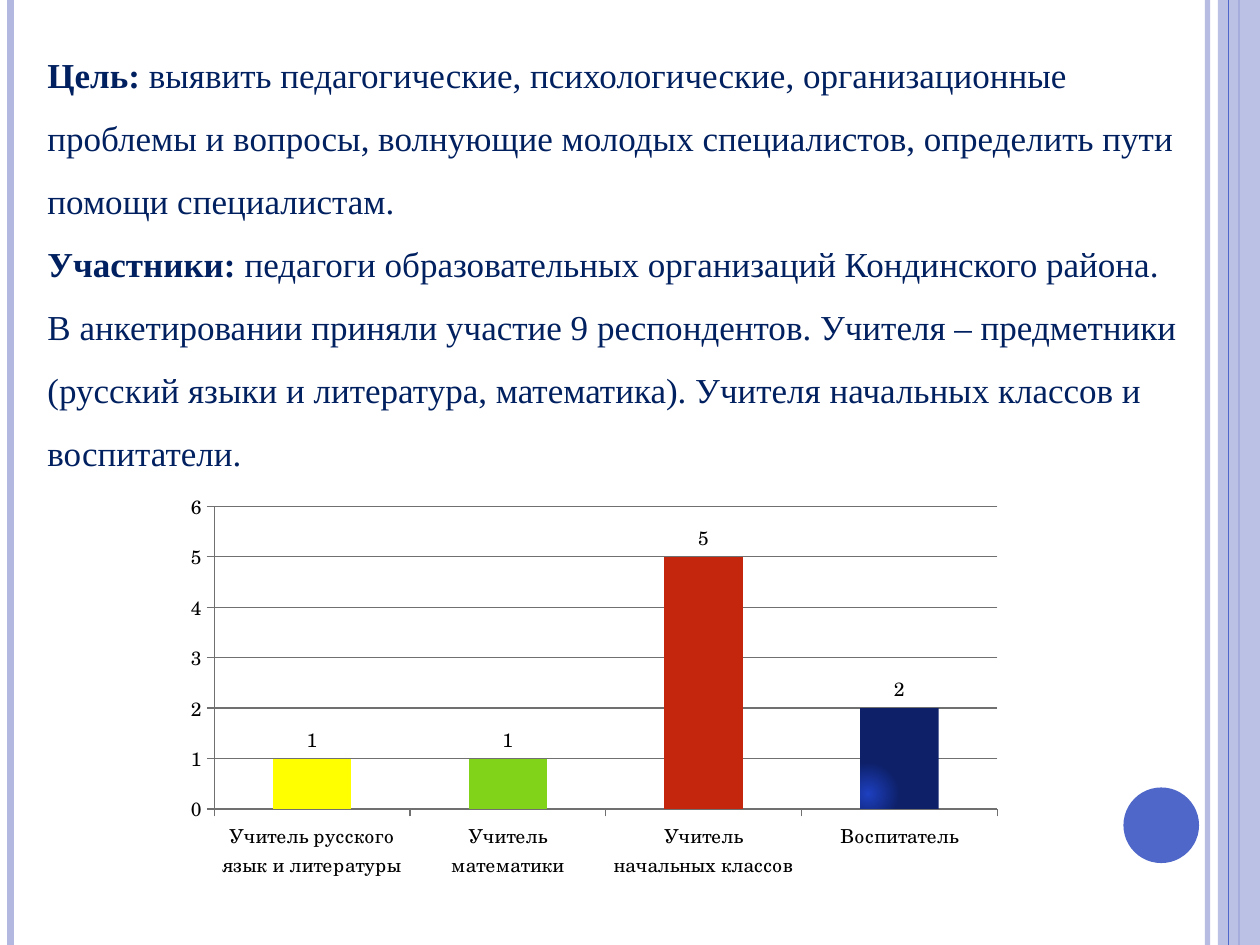
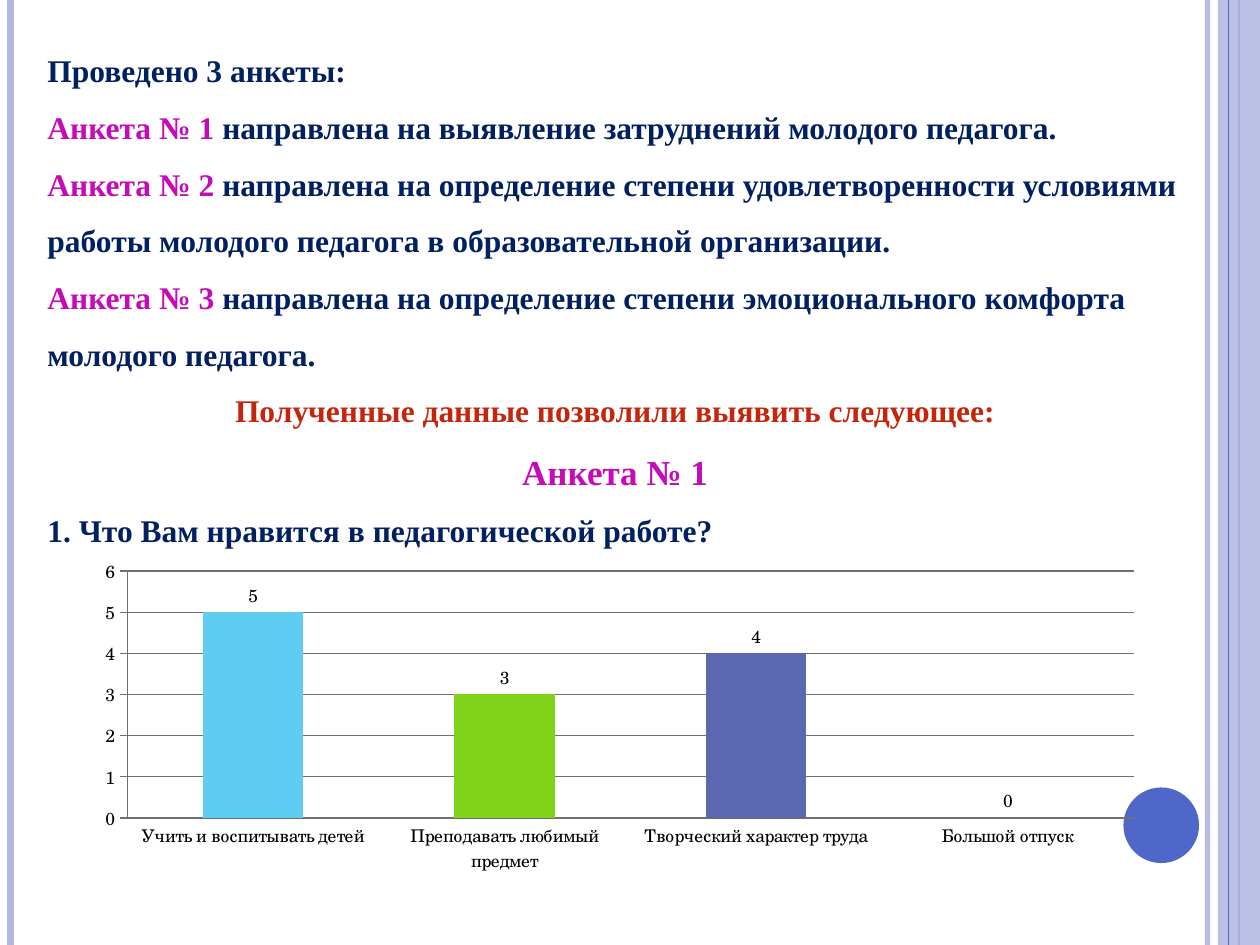
"""Build two slides on a survey of young teachers, each with text and a column chart."""
import dataclasses

import pptx
import pptx.chart.data
import pptx.dml.color
import pptx.enum.chart
import pptx.enum.dml
import pptx.enum.shapes
import pptx.enum.text
import pptx.oxml.ns
import pptx.oxml.xmlchemy
import pptx.util

Pt = pptx.util.Pt
RGB = pptx.dml.color.RGBColor.from_string
qn = pptx.oxml.ns.qn
OxmlElement = pptx.oxml.xmlchemy.OxmlElement


@dataclasses.dataclass(frozen=True)
class Theme:
    accent: str = "4E67C8"
    pale: str = "B2B8E0"
    navy: str = "002060"
    magenta: str = "C50BB8"
    red: str = "C3260C"
    yellow: str = "FFFF00"
    green: str = "81D31A"
    sky: str = "5ECCF3"
    violet: str = "5968B0"
    glow: str = "1E40C0"
    night: str = "0D2068"
    axis: str = "707070"
    black: str = "000000"
    body_font: str = "Times New Roman"
    chart_font: str = "TeX Gyre Schola"
    large: int = 20
    body: int = 18


theme = Theme()
WIDTH, HEIGHT = 720, 540


def add_run(p, text, size=theme.body, color=theme.navy, bold=True):
    r = p.add_run()
    r.text = text
    r.font.name = theme.body_font
    r.font.size = Pt(size)
    r.font.bold = bold
    r.font.color.rgb = RGB(color)


def set_opacity(sp, percent):
    color = next(sp._element.spPr.iter(qn("a:srgbClr")))
    alpha = OxmlElement("a:alpha")
    alpha.set("val", str(percent * 1000))
    color.append(alpha)


big = {"size": theme.large}
plain = {"size": theme.large, "bold": False}
pink = {"color": theme.magenta}
slides = [
    {
        "text_height": 262,
        "paragraphs": [
            (False, [("Цель: ", big),
                     ("выявить педагогические, психологические, организационные проблемы и вопросы, "
                      "волнующие молодых специалистов, определить пути помощи специалистам.", plain)]),
            (False, [("Участники: ", big),
                     ("педагоги образовательных организаций Кондинского района.", plain)]),
            (False, [("В анкетировании приняли участие 9 респондентов. Учителя – предметники "
                      "(русский языки и литература, математика). Учителя начальных классов и "
                      "воспитатели.", plain)]),
        ],
        "chart_box": (99.5, 276.5, 480, 230.5),
        "chart_size": 11,
        "category_tick": pptx.enum.chart.XL_TICK_MARK.OUTSIDE,
        "bars": [
            ("Учитель русского язык и литературы", 1, theme.yellow),
            ("Учитель математики", 1, theme.green),
            ("Учитель начальных классов", 5, theme.red),
            ("Воспитатель", 2, None),
        ],
    },
    {
        "text_height": 523.5,
        "paragraphs": [
            (False, [("Проведено 3 анкеты:", {})]),
            (False, [("Анкета № 1 ", pink),
                     ("направлена на выявление затруднений молодого педагога.", {})]),
            (False, [("Анкета № 2 ", pink),
                     ("направлена на определение степени удовлетворенности условиями работы "
                      "молодого педагога в образовательной организации.", {})]),
            (False, [("Анкета № 3 ", pink),
                     ("направлена на определение степени эмоционального комфорта молодого "
                      "педагога.", {})]),
            (True, [("Полученные данные позволили выявить следующее:", {"color": theme.red})]),
            (True, [("Анкета № 1", {**big, **pink})]),
            (False, [("1. Что Вам нравится в педагогической работе?", {})]),
        ],
        "chart_box": (48, 315.5, 612, 187),
        "chart_size": 10,
        "category_tick": pptx.enum.chart.XL_TICK_MARK.NONE,
        "bars": [
            ("Учить и воспитывать детей", 5, theme.sky),
            ("Преподавать любимый предмет", 3, theme.green),
            ("Творческий характер труда", 4, theme.violet),
            ("Большой отпуск", 0, theme.violet),
        ],
    },
]

prs = pptx.Presentation()
prs.slide_width, prs.slide_height = Pt(WIDTH), Pt(HEIGHT)

for content in slides:
    s = prs.slides.add_slide(prs.slide_layouts[6])

    stripes = []
    for x, color, weight in [(690, theme.pale, 3), (6, theme.pale, 4.5),
                             (708, theme.accent, 1.5), (702, theme.accent, 0.75)]:
        stripe = s.shapes.add_connector(
            pptx.enum.shapes.MSO_CONNECTOR.STRAIGHT, Pt(x), Pt(0), Pt(x), Pt(HEIGHT))
        stripe.line.color.rgb = RGB(color)
        stripe.line.width = Pt(weight)
        stripe._element.spPr.append(OxmlElement("a:effectLst"))
        stripes.append(stripe)
        if x == 708:
            band = s.shapes.add_shape(
                pptx.enum.shapes.MSO_SHAPE.RECTANGLE, Pt(696), Pt(0), Pt(24), Pt(HEIGHT))
            stripe.begin_connect(band, 0)
            stripe.end_connect(band, 2)
    set_opacity(stripes[0], 93)

    dot = s.shapes.add_shape(
        pptx.enum.shapes.MSO_SHAPE.OVAL, Pt(642), Pt(450), Pt(43.2), Pt(43.2))
    for sp, color in [(band, theme.pale), (dot, theme.accent)]:
        sp.shadow.inherit = False
        sp.fill.solid()
        sp.fill.fore_color.rgb = RGB(color)
        sp.line.fill.background()
    set_opacity(band, 87)

    tf = s.shapes.add_textbox(Pt(20), Pt(15), Pt(663), Pt(content["text_height"])).text_frame
    tf.word_wrap = True
    for i, (centred, runs) in enumerate(content["paragraphs"]):
        p = tf.add_paragraph() if i else tf.paragraphs[0]
        p.line_spacing = 1.5
        if centred:
            p.alignment = pptx.enum.text.PP_ALIGN.CENTER
        for text, style in runs:
            add_run(p, text, **style)

    names, values, colors = zip(*content["bars"])
    data = pptx.chart.data.CategoryChartData(number_format="General")
    data.categories = names
    data.add_series("Series 1", values)
    chart = s.shapes.add_chart(
        pptx.enum.chart.XL_CHART_TYPE.COLUMN_CLUSTERED,
        *map(Pt, content["chart_box"]), data).chart
    chart.has_legend = False
    chart.has_title = False
    chart.font.name = theme.chart_font
    chart.font.size = Pt(content["chart_size"])
    chart.font.color.rgb = RGB(theme.black)

    plot = chart.plots[0]
    plot.vary_by_categories = False
    plot.gap_width = 150
    plot.has_data_labels = True
    plot.data_labels.show_value = True
    plot.data_labels.position = pptx.enum.chart.XL_LABEL_POSITION.OUTSIDE_END

    chart.category_axis.major_tick_mark = content["category_tick"]
    axis = chart.value_axis
    axis.major_tick_mark = pptx.enum.chart.XL_TICK_MARK.OUTSIDE
    axis.minimum_scale, axis.maximum_scale, axis.major_unit = 0, 6, 1
    axis.has_major_gridlines = True
    for line in (chart.category_axis.format.line, axis.format.line,
                 axis.major_gridlines.format.line):
        line.color.rgb = RGB(theme.axis)
        line.width = Pt(0.75)

    series = plot.series[0]
    series.format.fill.solid()
    series.format.fill.fore_color.rgb = RGB(theme.accent if None in colors else theme.violet)
    for i, color in enumerate(colors):
        fill = series.points[i].format.fill
        if color:
            fill.solid()
            fill.fore_color.rgb = RGB(color)
            continue
        fill.gradient()
        for stop, shade, position in zip(fill.gradient_stops, (theme.glow, theme.night), (0, 0.5)):
            stop.color.rgb = RGB(shade)
            stop.position = position
        gradient = next(chart._chartSpace.iter(qn("a:gradFill")))
        gradient.remove(gradient.find(qn("a:lin")))
        radial = OxmlElement("a:path")
        radial.set("path", "circle")
        focus = OxmlElement("a:fillToRect")
        for side, percent in zip("ltrb", (10, 85, 90, 15)):
            focus.set(side, str(percent * 1000))
        radial.append(focus)
        gradient.append(radial)

prs.save("out.pptx")
